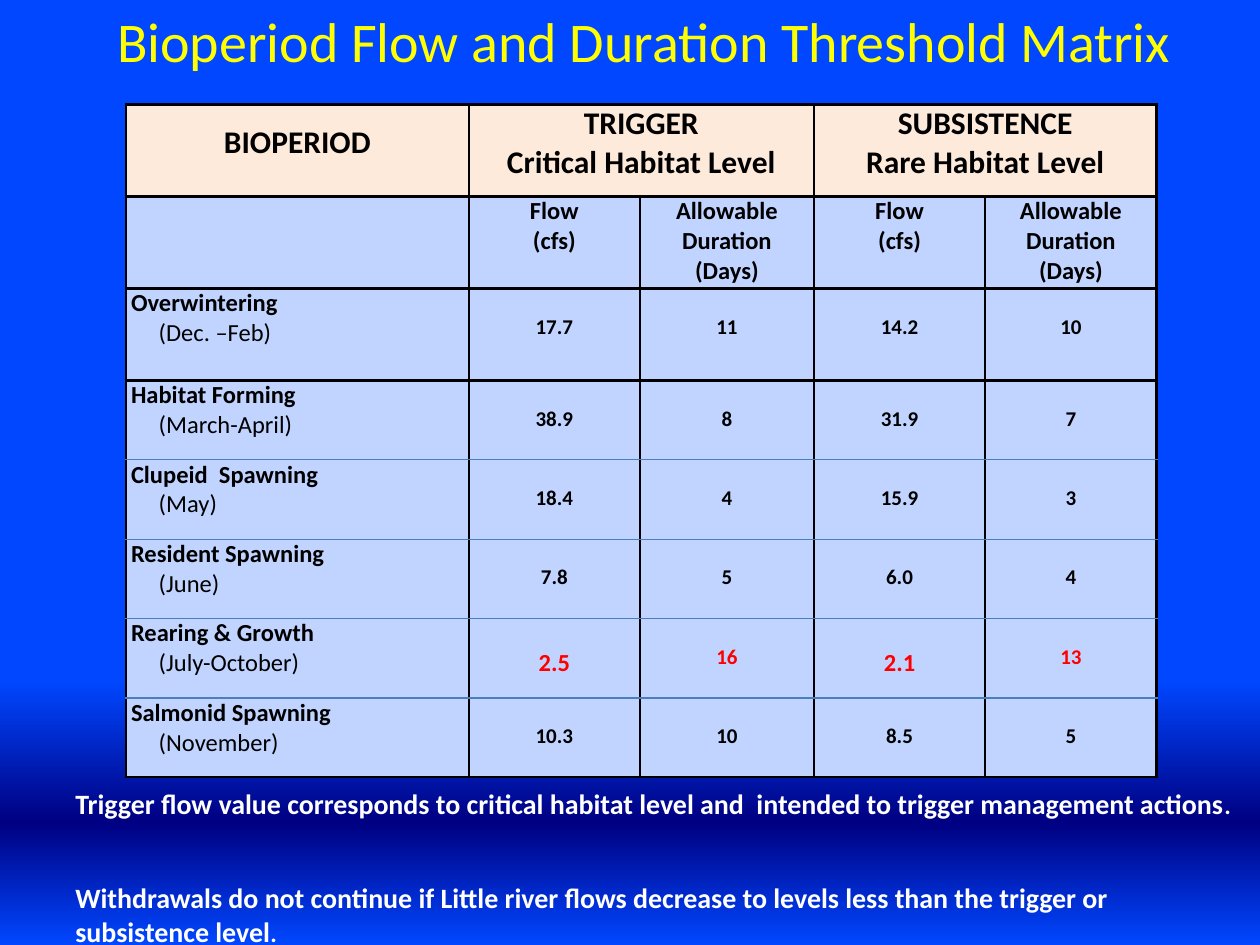
from lxml import etree
from pptx import Presentation
from pptx.dml.color import RGBColor
from pptx.enum.text import MSO_ANCHOR, PP_ALIGN
from pptx.oxml import parse_xml
from pptx.oxml.ns import nsdecls, qn
from pptx.util import Inches, Pt

BLACK, BLUE, RED = "000000", "4B7EBC", "FF0000"
COL_W = [2.72, 1.36, 1.38, 1.36, 1.36]
ROW_H = [0.73] * 3 + [0.63] * 5
SUBHEADS = ["", "Flow\n(cfs)", "Allowable Duration\n(Days)",
            "Flow\n(cfs)", "Allowable\nDuration\n(Days)"]
BIOPERIODS = [
    ("Overwintering", "(Dec. –Feb)", "17.7", "11", "14.2", "10"),
    ("Habitat Forming", "(March-April)", "38.9", "8", "31.9", "7"),
    ("Clupeid  Spawning", "(May)", "18.4", "4", "15.9", "3"),
    ("Resident Spawning", "(June)", "7.8", "5", "6.0", "4"),
    ("Rearing & Growth", "(July-October)", "2.5", "16", "2.1", "13"),
    ("Salmonid Spawning", "(November)", "10.3", "10", "8.5", "5"),
]


def rgb(color):
    return RGBColor.from_string(color)


def style(font, size, color, bold=False):
    font.name, font.size, font.bold = "Calibri", Pt(size), bold
    font.color.rgb = rgb(color)


def add_background(s):
    stops = "".join(
        f'<a:gs pos="{pos * 1000}"><a:srgbClr val="{color}"/></a:gs>'
        for pos, color in [(0, "0047FF"), (72, "0047FF"), (87, "000082"), (100, "0047FF")])
    fill = s.background.fill
    fill.gradient()
    old = s.element.find(".//" + qn("a:gradFill"))
    old.getparent().replace(old, parse_xml(
        f'<a:gradFill {nsdecls("a")} rotWithShape="1"><a:gsLst>{stops}</a:gsLst>'
        '<a:lin ang="5400000" scaled="0"/></a:gradFill>'))


def add_title(s, text, x, y, w, h):
    title = s.shapes.title
    title.left, title.top, title.width, title.height = map(Inches, (x, y, w, h))
    tf = title.text_frame
    tf.text = text
    tf.word_wrap = True
    tf.vertical_anchor = MSO_ANCHOR.TOP
    p = tf.paragraphs[0]
    p.alignment = PP_ALIGN.LEFT
    style(p.font, 32, "FFFF00")


def add_border(cell, side, color, width):
    ln = etree.SubElement(cell._tc.get_or_add_tcPr(), qn(f"a:ln{side}"), w=str(Pt(width)))
    fill = etree.SubElement(ln, qn("a:solidFill"))
    etree.SubElement(fill, qn("a:srgbClr"), val=color)


def format_cell(cell, row):
    """Borders come before the fill in the cell properties."""
    black, blue = (BLACK, 1.5), (BLUE, 0.75)
    above = black if row <= 3 else blue
    below = black if row <= 2 or row == len(ROW_H) - 1 else blue
    for side, line in zip("LRTB", (black, black, above, below)):
        add_border(cell, side, *line)
    cell.fill.solid()
    cell.fill.fore_color.rgb = rgb("FDEADA" if row == 0 else "C0D4FF")
    cell.margin_left = cell.margin_right = Inches(0.04)
    cell.margin_top = cell.margin_bottom = 0


def write_cell(cell, text, size, color=BLACK, align=PP_ALIGN.CENTER, spacing=None):
    cell.text = text
    for p in cell.text_frame.paragraphs:
        p.alignment = align
        if spacing:
            p.line_spacing = spacing
        style(p.font, size, color, True)


def add_matrix(s, x, y, w, h):
    table = s.shapes.add_table(len(ROW_H), len(COL_W), *map(Inches, (x, y, w, h))).table
    table.first_row = table.horz_banding = False
    for col, width in zip(table.columns, COL_W):
        col.width = Inches(width)
    for i, (row, height) in enumerate(zip(table.rows, ROW_H)):
        row.height = Inches(height)
        for cell in row.cells:
            format_cell(cell, i)

    # Header rows
    for c in (1, 3):
        table.cell(0, c).merge(table.cell(0, c + 1))
    write_cell(table.cell(0, 0), "BIOPERIOD", 18, spacing=1.5)
    write_cell(table.cell(0, 1), "TRIGGER\nCritical Habitat Level", 18)
    write_cell(table.cell(0, 3), "SUBSISTENCE\nRare Habitat Level", 18)
    for c, text in enumerate(SUBHEADS):
        write_cell(table.cell(1, c), text, 14)

    # One row per bioperiod
    for i, (name, months, *values) in enumerate(BIOPERIODS, 2):
        cell = table.cell(i, 0)
        write_cell(cell, f"{name}\n{months}", 14, align=PP_ALIGN.LEFT)
        p = cell.text_frame.paragraphs[1]
        p.font.bold = False
        p._p.get_or_add_pPr().set("marL", str(Inches(0.22)))
        critical = name == "Rearing & Growth"
        for c, value in enumerate(values, 1):
            size = 14 if critical and c in (1, 3) else 12
            write_cell(table.cell(i, c), value, size, RED if critical else BLACK, spacing=2.0)


def add_note(s, text, x, y, w, h):
    tf = s.shapes.add_textbox(*map(Inches, (x, y, w, h))).text_frame
    tf.word_wrap = True
    p = tf.paragraphs[0]
    for part, size in ((text, 16), (".", 14)):
        r = p.add_run()
        r.text = part
        style(r.font, size, "FFFFFF", True)


def main():
    prs = Presentation()
    prs.slide_width, prs.slide_height = Inches(10), Inches(7.5)
    s = prs.slides.add_slide(prs.slide_layouts[5])
    add_background(s)
    add_title(s, "Bioperiod Flow and Duration Threshold Matrix", 0.83, 0, 8.83, 0.64)
    add_matrix(s, 1, 0.83, sum(COL_W), sum(ROW_H))
    add_note(s, "Trigger flow value corresponds to critical habitat level and  intended "
             "to trigger management actions", 0.5, 6.19, 9.5, 0.37)
    add_note(s, "Withdrawals do not continue if Little river flows decrease to levels "
             "less than the trigger or subsistence level", 0.5, 6.94, 9.17, 0.64)
    prs.save("out.pptx")


if __name__ == "__main__":
    main()
